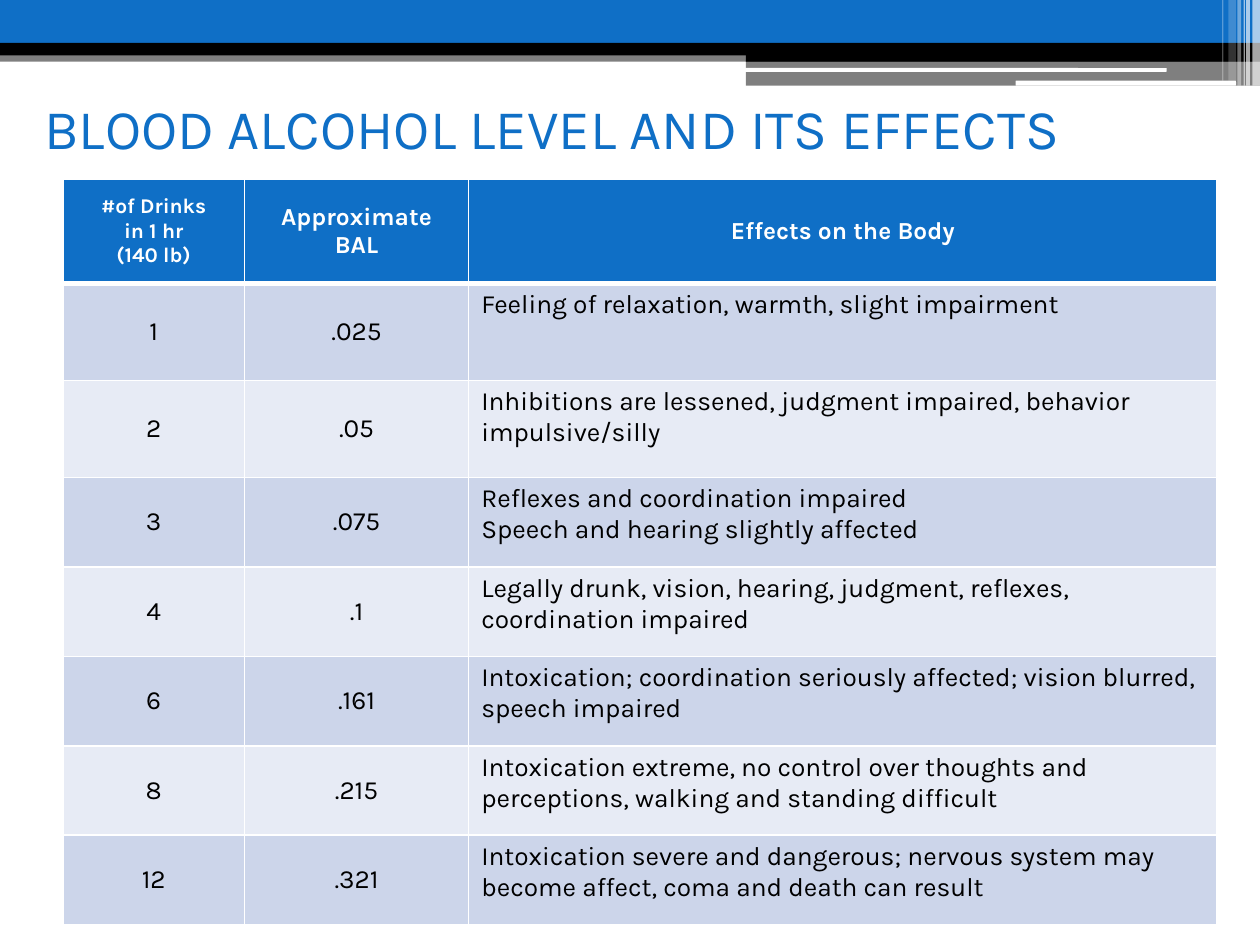
from lxml.etree import SubElement
from pptx import Presentation
from pptx.dml.color import RGBColor
from pptx.enum.shapes import MSO_SHAPE as Shape
from pptx.enum.text import MSO_ANCHOR as Anchor, MSO_AUTO_SIZE as AutoSize, PP_ALIGN as Align
from pptx.oxml import parse_xml
from pptx.oxml.ns import nsdecls, qn
from pptx.util import Inches, Pt

BLUE, BLACK, WHITE = "0F6FC6", "000000", "FFFFFF"
BANDS = ["CCD5EA", "E7EBF5"]
FONT = "Karla"

deck = Presentation()
deck.slide_width, deck.slide_height = Inches(10), Inches(7.5)
COLUMN, ROW = deck.slide_width / 100, deck.slide_height / 75  # page grid
page = deck.slides.add_slide(deck.slide_layouts[5])


def paint(fill, color, opacity=100):
    fill.solid()
    fill.fore_color.rgb = RGBColor.from_string(color)
    if opacity < 100:
        tint = fill._xPr.find(qn("a:solidFill"))[0]
        SubElement(tint, qn("a:alpha"), val=str(opacity * 1000))


def write(frame, lines, size, color, bold=False, align=Align.LEFT):
    frame.text = "\n".join(lines)
    for para in frame.paragraphs:
        para.alignment = align
        for span in para.runs:
            for name, value in {"name": FONT, "size": Pt(size), "bold": bold}.items():
                setattr(span.font, name, value)
            paint(span.font.fill, color)


# Header bars and the thin stripes at the right edge:
# left, top, width, height, colour, opacity
bars = [
    (0, 4, 100, 0.9, BLACK, 50),
    (0, 0, 100, 3.4, BLUE, 100),
    (0, 3.4, 100, 1, BLACK, 100),
    (59.2, 3.9, 40.8, 1, BLACK, 100),
    (59.2, 4.8, 40.8, 2, BLACK, 50),
    (59.1, 5.4, 33.5, 0.3, WHITE, 100),
    (80.6, 6.4, 17.5, 0.4, WHITE, 100),
]
stripes = [
    (99.4, 0.6, 6.8, 65), (98.9, 0.3, 6.8, 65), (98.7, 0.1, 6.8, 60),
    (98.2, 0.3, 6.8, 40), (97.5, 0.6, 6.4, 20), (97, 0.1, 6.4, 30),
]
bars += [(left, 0, width, height, WHITE, opacity) for left, width, height, opacity in stripes]
for left, top, width, height, color, opacity in bars:
    rounded = color == WHITE and opacity == 100
    kind = Shape.ROUNDED_RECTANGLE if rounded else Shape.RECTANGLE
    bar = page.shapes.add_shape(kind, int(left * COLUMN), int(top * ROW),
                                int(width * COLUMN), int(height * ROW))
    bar.shadow.inherit = False
    bar.line.fill.background()
    paint(bar.fill, color, opacity)

# Title
title = page.shapes.title
place = {"left": 2.5 * COLUMN, "top": 6.7 * ROW, "width": 90 * COLUMN, "height": 6.7 * ROW}
for name, value in place.items():
    setattr(title, name, int(value))
for name, value in {"word_wrap": True, "auto_size": AutoSize.NONE,
                    "vertical_anchor": Anchor.MIDDLE}.items():
    setattr(title.text_frame, name, value)
write(title.text_frame, ["BLOOD ALCOHOL LEVEL AND ITS EFFECTS"], 32, BLUE)

# Table: drinks, blood alcohol level, lines of effects
records = [
    ("1", ".025", ["Feeling of relaxation, warmth, slight impairment"]),
    ("2", ".05", ["Inhibitions are lessened, judgment impaired, behavior impulsive/silly"]),
    ("3", ".075", ["Reflexes and coordination impaired", "Speech and hearing slightly affected"]),
    ("4", ".1", ["Legally drunk, vision, hearing, judgment, reflexes, coordination impaired"]),
    ("6", ".161", ["Intoxication; coordination seriously affected; vision blurred, speech impaired"]),
    ("8", ".215", ["Intoxication extreme, no control over thoughts and perceptions, "
                   "walking and standing difficult"]),
    ("12", ".321", ["Intoxication severe and dangerous; nervous system may become affect, "
                    "coma and death can result"]),
]
rows = [(["#of Drinks", "in 1 hr", "(140 lb)"], ["Approximate BAL"], ["Effects on the Body"])]
rows += [([drinks], [level], effects) for drinks, level, effects in records]
widths = [14.4, 17.8, 59.4]
heights = [8.3] + 2 * [7.7] + 5 * [7.1]

table = page.shapes.add_table(len(rows), len(widths), int(5 * COLUMN), int(14.2 * ROW),
                              int(sum(widths) * COLUMN), int(sum(heights) * ROW)).table
for column, width in zip(table.columns, widths):
    column.width = int(width * COLUMN)
for row, height in zip(table.rows, heights):
    row.height = int(height * ROW)

for r, row in enumerate(rows):
    header = r == 0
    for c, lines in enumerate(row):
        cell = table.cell(r, c)
        centred = header or c < 2
        size = (12 if c == 0 else 14) if header else 15
        write(cell.text_frame, lines, size, WHITE if header else BLACK, header,
              Align.CENTER if centred else Align.LEFT)
        cell.vertical_anchor = Anchor.MIDDLE if centred else Anchor.TOP
        # White rules, the heaviest one under the header
        for side in "LRTB":
            heavy = (header and side == "B") or (r == 1 and side == "T")
            cell._tc.get_or_add_tcPr().append(parse_xml(
                f'<a:ln{side} {nsdecls("a")} w="{Pt(3 if heavy else 1)}"><a:solidFill>'
                f'<a:srgbClr val="{WHITE}"/></a:solidFill></a:ln{side}>'))
        paint(cell.fill, BLUE if header else BANDS[(r - 1) % 2])

deck.save("out.pptx")
